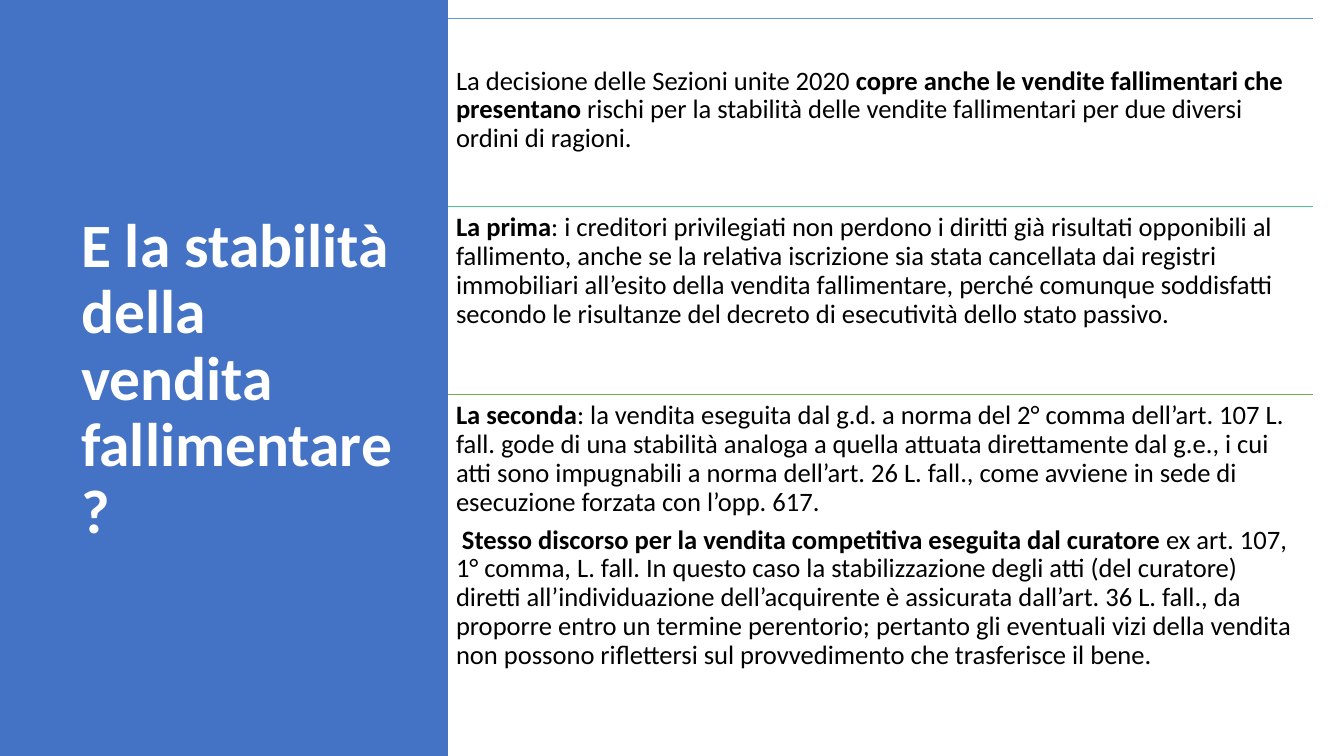
from lxml.etree import SubElement
from pptx import Presentation
from pptx.dml.color import RGBColor
from pptx.enum.shapes import MSO_CONNECTOR, MSO_SHAPE
from pptx.enum.text import MSO_ANCHOR, PP_ALIGN
from pptx.oxml.ns import qn
from pptx.util import Pt

PX = 9071.43  # EMU per px
FONT = "Calibri"
COLORS = {
    "panel": "4472C4",
    "title": "FFFFFF",
    "text": "000000",
    "intro": "5B9BD5",
    "first": "4DC58D",
    "second": "70AD47",
}

TITLE = "E la stabilità della vendita fallimentare?"

# Each section: rule colour, height, top inset, paragraphs of (text, bold) runs
SECTIONS = [
    ("intro", 188, 49, [
        [("La decisione delle Sezioni unite 2020 ", False),
         ("copre anche le vendite fallimentari che presentano", True),
         (" rischi per la stabilità delle vendite fallimentari per due diversi "
          "ordini di ragioni.", False)],
    ]),
    ("first", 188, 8, [
        [("La prima", True),
         (": i creditori privilegiati non perdono i diritti già risultati "
          "opponibili al fallimento, anche se la relativa iscrizione sia stata "
          "cancellata dai registri immobiliari all’esito della vendita "
          "fallimentare, perché comunque soddisfatti secondo le risultanze del "
          "decreto di esecutività dello stato passivo.", False)],
    ]),
    ("second", 320, 8, [
        [("La seconda", True),
         (": la vendita eseguita dal g.d. a norma del 2° comma dell’art. 107 L. "
          "fall. gode di una stabilità analoga a quella attuata direttamente "
          "dal g.e., i cui atti sono impugnabili a norma dell’art. 26 L. fall., "
          "come avviene in sede di esecuzione forzata con l’opp. 617.", False)],
        [(" Stesso discorso per la vendita competitiva eseguita dal curatore ",
          True),
         ("ex art. 107, 1° comma, L. fall. In questo caso la stabilizzazione "
          "degli atti (del curatore) diretti all’individuazione dell’acquirente "
          "è assicurata dall’art. 36 L. fall., da proporre entro un termine "
          "perentorio; pertanto gli eventuali vizi della vendita non possono "
          "riflettersi sul provvedimento che trasferisce il bene.", False)],
    ]),
]


def px(n):
    return round(n * PX)


def rgb(name):
    return RGBColor.from_string(COLORS[name])


def format_paragraph(p, size, color):
    p.alignment = PP_ALIGN.LEFT
    p.line_spacing = 0.9
    p.font.name = FONT
    p.font.size = Pt(size)
    p.font.color.rgb = rgb(color)


def add_title_panel(s, x, y, w, h):
    # Coloured panel
    panel = s.shapes.add_shape(MSO_SHAPE.RECTANGLE, px(x), px(y), px(w), px(h))
    panel.shadow.inherit = False
    panel.fill.solid()
    panel.fill.fore_color.rgb = rgb("panel")
    panel.line.fill.background()

    # Title, brought in front of the panel
    title = s.shapes.title
    panel.element.addnext(title.element)
    title.left, title.top = px(x + 72), px(y + 71)
    title.width, title.height = px(w - 107), px(h - 137)
    tf = title.text_frame
    tf.text = TITLE
    tf.word_wrap = True
    tf.vertical_anchor = MSO_ANCHOR.MIDDLE
    p = tf.paragraphs[0]
    format_paragraph(p, 44, "title")
    p.font.bold = True


def add_section(s, x, y, w, h, color, top_inset, paragraphs):
    # Rule above the text
    rule = s.shapes.add_connector(
        MSO_CONNECTOR.STRAIGHT, px(x), px(y), px(x + w), px(y))
    rule.line.color.rgb = rgb(color)
    rule.line.width = Pt(0.5)
    SubElement(rule.element.spPr, qn("a:effectLst"))

    # Text
    tf = s.shapes.add_textbox(px(x), px(y), px(w), px(h)).text_frame
    tf.word_wrap = True
    tf.vertical_anchor = MSO_ANCHOR.TOP
    tf.margin_left = tf.margin_right = tf.margin_bottom = px(8)
    tf.margin_top = px(top_inset)
    for i, runs in enumerate(paragraphs):
        p = tf.add_paragraph() if i else tf.paragraphs[0]
        format_paragraph(p, 19, "text")
        p.space_after = Pt(6.65)
        for text, bold in runs:
            r = p.add_run()
            r.text = text
            r.font.bold = bold


def add_sections(s, x, y, w):
    for color, h, top_inset, paragraphs in SECTIONS:
        add_section(s, x, y, w, h, color, top_inset, paragraphs)
        y += h


def main():
    prs = Presentation()
    prs.slide_width, prs.slide_height = px(1344), px(756)
    s = prs.slides.add_slide(prs.slide_layouts[5])
    add_title_panel(s, -1, 0, 449, 756)
    add_sections(s, 448, 18, 865)
    prs.save("out.pptx")


if __name__ == "__main__":
    main()
